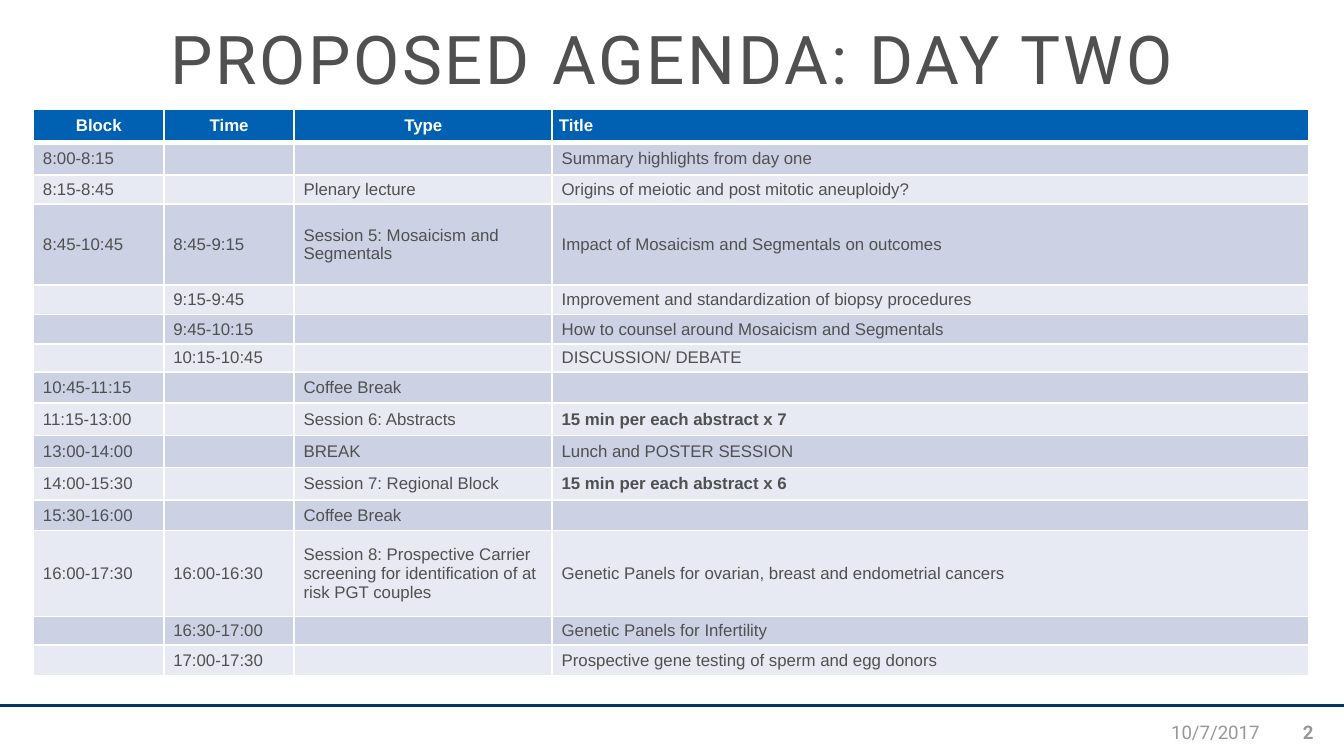
from lxml.etree import Element, SubElement
from pptx import Presentation
from pptx.dml.color import RGBColor
from pptx.enum.shapes import MSO_CONNECTOR
from pptx.enum.text import MSO_ANCHOR, PP_ALIGN
from pptx.oxml.ns import qn
from pptx.util import Inches, Pt

THEME = {
    "heading_font": "Roboto", "table_font": "Arial",
    "title_size": 36, "table_size": 9, "footer_size": 10,
    "text": "505050", "muted": "989898", "white": "FFFFFF",
    "header": "0061B2", "bands": ("CCD2E4", "E7EAF2"), "rule": "003765",
}

TITLE = "PROPOSED AGENDA: DAY TWO"
HEADINGS = ("Block", "Time", "Type", "Title")
COLUMN_WIDTHS = (0.97, 0.97, 1.92, 5.63)
HEADER_HEIGHT = 0.25
# row height, then block, time, type, title
AGENDA = [
    (0.24, "8:00-8:15", "", "", "Summary highlights from day one"),
    (0.22, "8:15-8:45", "", "Plenary lecture", "Origins of meiotic and post mitotic aneuploidy?"),
    (0.60, "8:45-10:45", "8:45-9:15", "Session 5: Mosaicism and Segmentals",
     "Impact of Mosaicism and Segmentals on outcomes"),
    (0.22, "", "9:15-9:45", "", "Improvement and standardization of biopsy procedures"),
    (0.22, "", "9:45-10:15", "", "How to counsel around Mosaicism and Segmentals"),
    (0.21, "", "10:15-10:45", "", "DISCUSSION/ DEBATE"),
    (0.23, "10:45-11:15", "", "Coffee Break", ""),
    (0.24, "11:15-13:00", "", "Session 6: Abstracts", "15 min per each abstract x 7"),
    (0.24, "13:00-14:00", "", "BREAK", "Lunch and POSTER SESSION"),
    (0.24, "14:00-15:30", "", "Session 7: Regional Block", "15 min per each abstract x 6"),
    (0.23, "15:30-16:00", "", "Coffee Break", ""),
    (0.64, "16:00-17:30", "16:00-16:30",
     "Session 8: Prospective Carrier screening for identification of at risk PGT couples",
     "Genetic Panels for ovarian, breast and endometrial cancers"),
    (0.21, "", "16:30-17:00", "", "Genetic Panels for Infertility"),
    (0.23, "", "17:00-17:30", "", "Prospective gene testing of sperm and egg donors"),
]
# text, left, width, alignment, bold
FOOTER = [
    ("10/7/2017", 7.14, 2.33, PP_ALIGN.RIGHT, False),
    ("2", 9.52, 0.43, PP_ALIGN.CENTER, True),
]


def style(paragraph, font, size, color, bold=False, align=PP_ALIGN.LEFT):
    paragraph.alignment = align
    paragraph.font.name = font
    paragraph.font.size = Pt(size)
    paragraph.font.bold = bold
    paragraph.font.color.rgb = RGBColor.from_string(color)


def add_borders(cell, bottom_width):
    """Draw white cell borders, 1 pt except for the bottom one."""
    properties = cell._tc.get_or_add_tcPr()
    for i, (side, width) in enumerate((("L", 1), ("R", 1), ("T", 1), ("B", bottom_width))):
        border = Element(qn(f"a:ln{side}"), w=str(Pt(width)))
        fill = SubElement(border, qn("a:solidFill"))
        SubElement(fill, qn("a:srgbClr"), val=THEME["white"])
        properties.insert(i, border)


def fill_cell(cell, text, fill, color, margins, bold, align=PP_ALIGN.LEFT, bottom_width=1):
    cell.fill.solid()
    cell.fill.fore_color.rgb = RGBColor.from_string(fill)
    add_borders(cell, bottom_width)
    cell.vertical_anchor = MSO_ANCHOR.MIDDLE
    side, end = margins
    cell.margin_left = cell.margin_right = Inches(side)
    cell.margin_top = cell.margin_bottom = Inches(end)
    paragraph = cell.text_frame.paragraphs[0]
    if text:
        paragraph.text = text
    else:  # keeps an empty cell from stretching its row
        SubElement(paragraph._p, qn("a:endParaRPr"), sz=str(THEME["table_size"] * 100))
    style(paragraph, THEME["table_font"], THEME["table_size"], color, bold, align)


def add_title(slide):
    title = slide.shapes.title
    title.left, title.top, title.width, title.height = map(Inches, (0.5, 0, 9, 0.94))
    title.text_frame.text = TITLE
    title.text_frame.vertical_anchor = MSO_ANCHOR.MIDDLE
    paragraph = title.text_frame.paragraphs[0]
    paragraph.line_spacing = 0.9
    style(paragraph, THEME["heading_font"], THEME["title_size"], THEME["text"],
          align=PP_ALIGN.CENTER)
    paragraph.runs[0]._r.get_or_add_rPr().set("spc", "150")


def add_agenda(slide):
    heights = [HEADER_HEIGHT] + [row[0] for row in AGENDA]
    table = slide.shapes.add_table(
        len(heights), len(HEADINGS), Inches(0.25), Inches(0.81),
        Inches(sum(COLUMN_WIDTHS)), Inches(sum(heights))).table
    for column, width in zip(table.columns, COLUMN_WIDTHS):
        column.width = Inches(width)
    for row, height in zip(table.rows, heights):
        row.height = Inches(height)
    for c, heading in enumerate(HEADINGS):
        align = PP_ALIGN.LEFT if heading == "Title" else PP_ALIGN.CENTER
        fill_cell(table.cell(0, c), heading, THEME["header"], THEME["white"],
                  (0.05, 0.05), True, align, bottom_width=3)
    for r, (_, *entries) in enumerate(AGENDA):
        for c, entry in enumerate(entries):
            fill_cell(table.cell(r + 1, c), entry, THEME["bands"][r % 2], THEME["text"],
                      (0.07, 0), entry.startswith("15 min"))


def add_footer(slide):
    rule = slide.shapes.add_connector(
        MSO_CONNECTOR.STRAIGHT, 0, Inches(5.25), Inches(10), Inches(5.25))
    rule.line.color.rgb = RGBColor.from_string(THEME["rule"])
    rule.line.width = Pt(2)
    SubElement(rule._element.spPr, qn("a:effectLst"))
    for text, left, width, align, bold in FOOTER:
        frame = slide.shapes.add_textbox(
            Inches(left), Inches(5.3), Inches(width), Inches(0.3)).text_frame
        frame.word_wrap = True
        frame.vertical_anchor = MSO_ANCHOR.MIDDLE
        frame.text = text
        style(frame.paragraphs[0], THEME["heading_font"], THEME["footer_size"],
              THEME["muted"], bold, align)


def main():
    prs = Presentation()
    prs.slide_width = Inches(10)
    prs.slide_height = prs.slide_width * 9 // 16
    slide = prs.slides.add_slide(prs.slide_layouts[5])
    add_footer(slide)
    add_title(slide)
    add_agenda(slide)
    prs.save("out.pptx")


if __name__ == "__main__":
    main()
